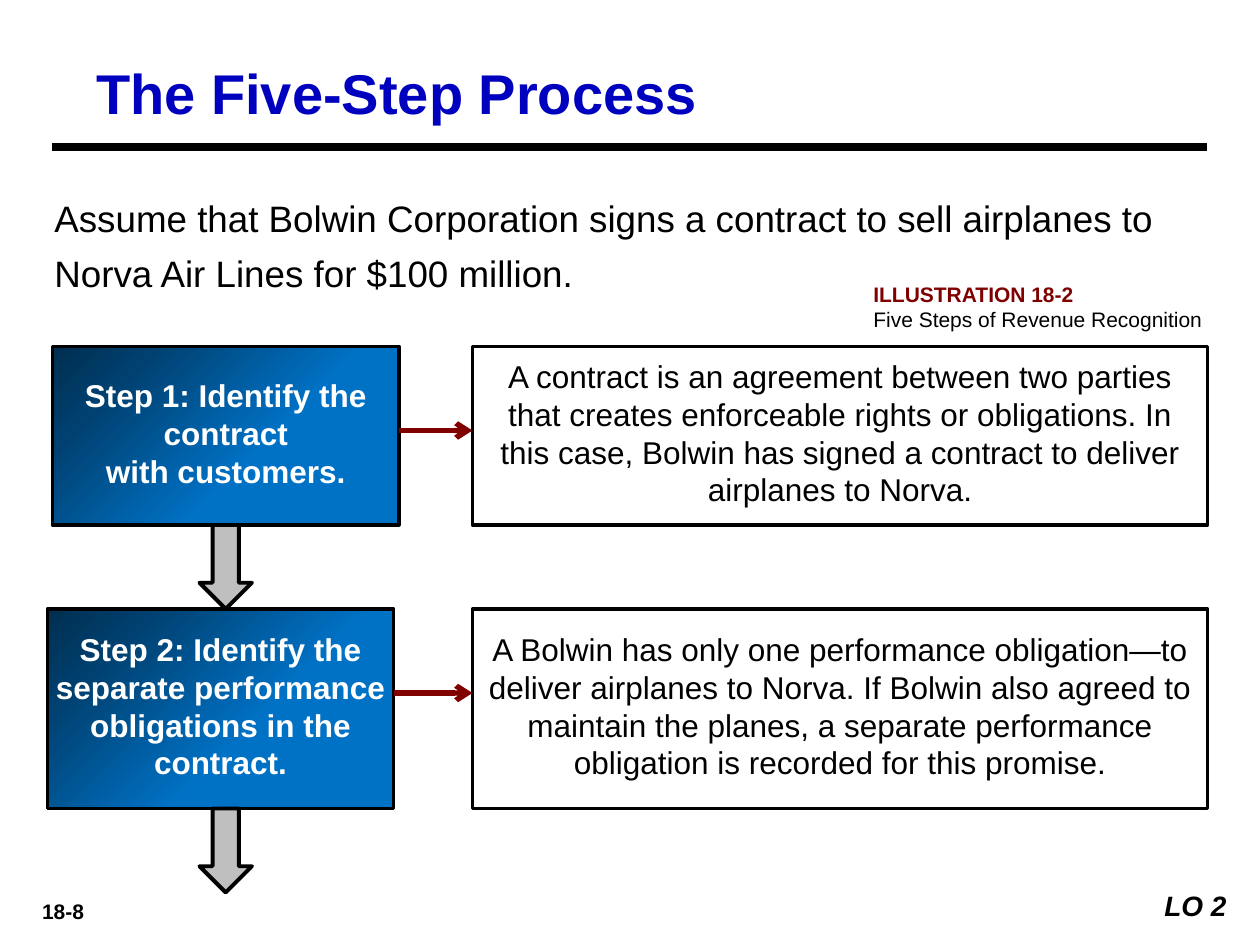
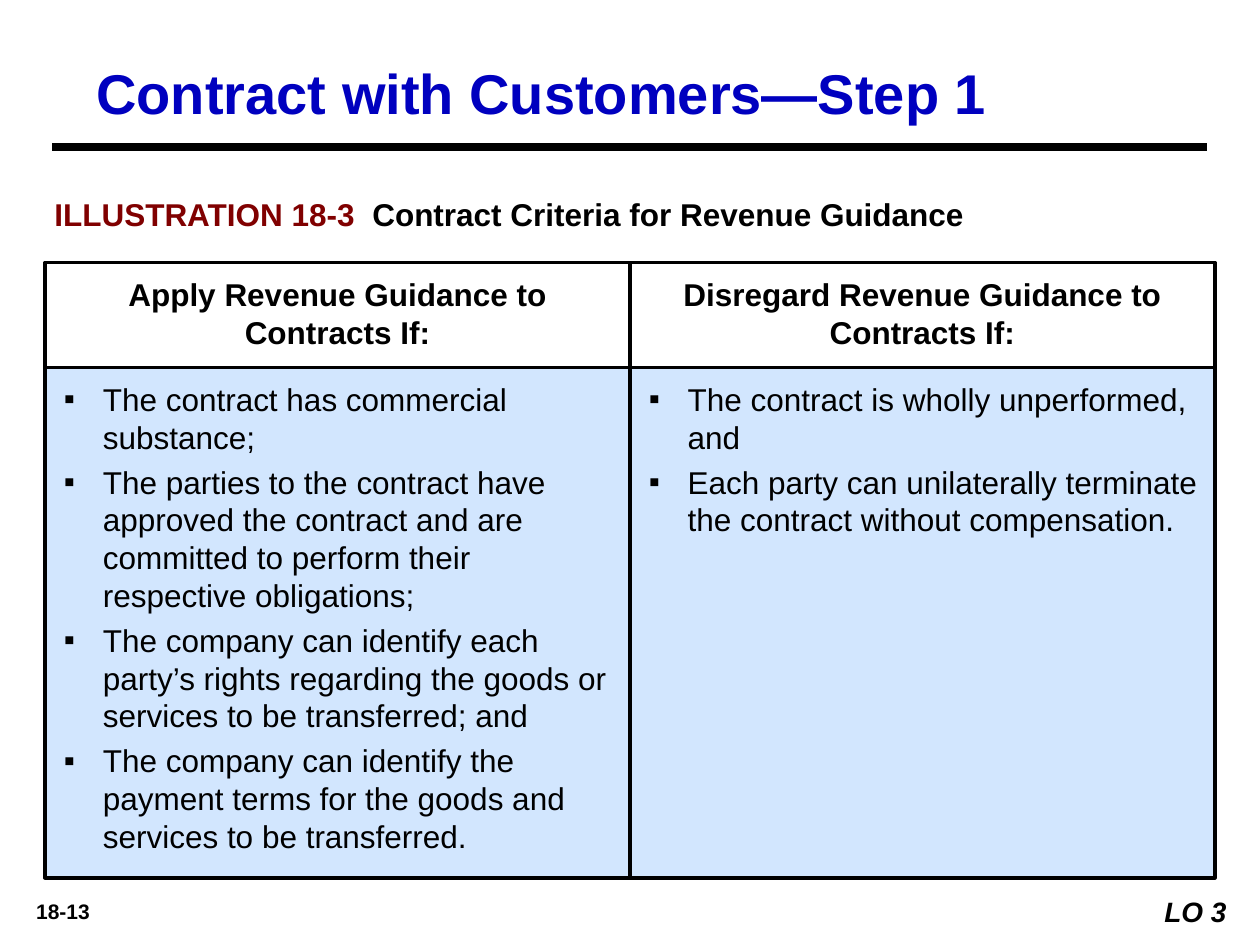
import pptx
import pptx.dml.color
import pptx.enum.shapes
import pptx.enum.text
import pptx.oxml
import pptx.oxml.ns
import pptx.util

RGBColor = pptx.dml.color.RGBColor
Shapes = pptx.enum.shapes.MSO_SHAPE
Align = pptx.enum.text.PP_ALIGN
Anchor = pptx.enum.text.MSO_ANCHOR

PX = 7620
FONT = "Arial"
BLACK = RGBColor(0x00, 0x00, 0x00)
WHITE = RGBColor(0xFF, 0xFF, 0xFF)
TITLE_BLUE = RGBColor(0x00, 0x00, 0xBF)
MAROON = RGBColor(0x80, 0x00, 0x00)
ARROW_GRAY = RGBColor(0xBF, 0xBF, 0xBF)
PALE_BLUE = RGBColor(0xD2, 0xE6, 0xFE)
STEP_GRADIENT = (
    (0, RGBColor(0x00, 0x2E, 0x4F)),
    (20, RGBColor(0x00, 0x41, 0x71)),
    (60, RGBColor(0x00, 0x72, 0xC6)),
)

FLOW_STEPS = (
    {
        "top": 330, "height": 170, "left": 50, "margin": 24, "detail_margin": 24,
        "step": ["Step 1: Identify the contract", "with customers."],
        "detail": [
            "A contract is an agreement between two parties",
            "that creates enforceable rights or obligations. In",
            "this case, Bolwin has signed a contract to deliver",
            "airplanes to Norva.",
        ],
    },
    {
        "top": 580, "height": 190, "left": 45, "margin": 6, "detail_margin": 12,
        "step": ["Step 2: Identify the separate performance obligations in the contract."],
        "detail": [
            "A Bolwin has only one performance obligation—to deliver airplanes to Norva. "
            "If Bolwin also agreed to maintain the planes, a separate performance "
            "obligation is recorded for this promise."
        ],
    },
)

CRITERIA = (
    (
        "Apply Revenue Guidance to Contracts If:",
        [
            "The contract has commercial substance;",
            "The parties to the contract have approved the contract and are committed "
            "to perform their respective obligations;",
            "The company can identify each party’s rights regarding the goods or "
            "services to be transferred; and",
            "The company can identify the payment terms for the goods and services "
            "to be transferred.",
        ],
    ),
    (
        "Disregard Revenue Guidance to Contracts If:",
        [
            "The contract is wholly unperformed, and",
            "Each party can unilaterally terminate the contract without compensation.",
        ],
    ),
)


def px(*lengths):
    """Turn px lengths into EMU."""
    return [pptx.util.Emu(length * PX) for length in lengths]


def make_element(tag, **attributes):
    """Make a drawing element such as a:effectLst with its attributes."""
    element = pptx.oxml.parse_xml(f"<{tag} {pptx.oxml.ns.nsdecls('a')}/>")
    for name, value in attributes.items():
        element.set(name, str(value))
    return element


def add_bullet(paragraph, indent):
    """Give a paragraph a square bullet with a hanging indent in px."""
    properties = paragraph._p.get_or_add_pPr()
    properties.set("marL", str(indent * PX))
    properties.set("indent", str(-indent * PX))
    properties.append(make_element("a:buFont", typeface=FONT))
    properties.append(make_element("a:buChar", char="▪"))


def write_text(shape, paragraphs, size=18, color=BLACK, bold=False, italic=False,
               align=Align.LEFT, anchor=Anchor.TOP, margins=(12, 6, 12, 6),
               line_spacing=None, space_before=None, bullet_indent=None):
    """Write paragraphs, each a string or a list of (text, color, bold) runs."""
    frame = shape.text_frame
    frame.word_wrap = True
    frame.vertical_anchor = anchor
    (frame.margin_left, frame.margin_top,
     frame.margin_right, frame.margin_bottom) = px(*margins)
    for index, content in enumerate(paragraphs):
        paragraph = frame.add_paragraph() if index else frame.paragraphs[0]
        paragraph.alignment = align
        if line_spacing:
            paragraph.line_spacing = line_spacing
        if space_before:
            paragraph.space_before = pptx.util.Pt(space_before)
        if bullet_indent:
            add_bullet(paragraph, bullet_indent)
        runs = [(content, color, bold)] if isinstance(content, str) else content
        for text, run_color, run_bold in runs:
            run = paragraph.add_run()
            run.text = text
            run.font.name = FONT
            run.font.size = pptx.util.Pt(size)
            run.font.bold = run_bold
            run.font.italic = italic
            run.font.color.rgb = run_color


def add_text(slide, box, paragraphs, **text_format):
    """Add a text box to the slide."""
    write_text(slide.shapes.add_textbox(*px(*box)), paragraphs, **text_format)


def add_box(slide, box, fill, line_width=None, kind=Shapes.RECTANGLE):
    """Add a filled shape, with a black outline if a width is given."""
    shape = slide.shapes.add_shape(kind, *px(*box))
    shape.shadow.inherit = False
    shape.fill.solid()
    shape.fill.fore_color.rgb = fill
    if line_width:
        shape.line.color.rgb = BLACK
        shape.line.width = pptx.util.Pt(line_width)
    else:
        shape.line.fill.background()
    return shape


def apply_gradient(shape, stops):
    """Replace the solid fill by a gradient spreading from the top left corner."""
    gradient = make_element("a:gradFill", rotWithShape=1)
    stop_list = make_element("a:gsLst")
    for position, color in stops:
        stop = make_element("a:gs", pos=position * 1000)
        stop.append(make_element("a:srgbClr", val=color))
        stop_list.append(stop)
    spread = make_element("a:path", path="circle")
    spread.append(make_element("a:fillToRect", r=100000, b=100000))
    gradient.extend([stop_list, spread])
    properties = shape.element.spPr
    solid = properties.find(pptx.oxml.ns.qn("a:solidFill"))
    properties.replace(solid, gradient)


def add_line(slide, start, end, color, width, arrow=False):
    """Add a straight line, with an arrowhead at its end if asked."""
    line = slide.shapes.add_connector(
        pptx.enum.shapes.MSO_CONNECTOR.STRAIGHT, *px(*start, *end))
    line.line.color.rgb = color
    line.line.width = pptx.util.Pt(width)
    properties = line.element.spPr
    if arrow:
        outline = properties.find(pptx.oxml.ns.qn("a:ln"))
        outline.append(make_element("a:tailEnd", type="arrow"))
    properties.append(make_element("a:effectLst"))


def add_base_slide(presentation, title, number, objective, objective_top):
    """Add a slide with the title, rule and footers that all slides share."""
    slide = presentation.slides.add_slide(presentation.slide_layouts[6])
    add_text(slide, (10, 850, 100, 36), [number], size=12, bold=True, align=Align.CENTER)
    add_line(slide, (50, 140), (1150, 140), BLACK, 4.5)
    write_text(add_box(slide, (1070, objective_top, 110, 44), WHITE), [objective],
               size=16, bold=True, italic=True, align=Align.RIGHT)
    add_text(slide, (80, 50, 1080, 73), [title], size=32, color=TITLE_BLUE, bold=True)
    return slide


def add_flow_row(slide, row):
    """Add a step, its detail box, the arrow between and the arrow below."""
    top, height, left = row["top"], row["height"], row["left"]
    step_width, detail_left = 330, 450
    detail = add_box(slide, (detail_left, top, 700, height), WHITE, 2)
    step = add_box(slide, (left, top, step_width, height), STEP_GRADIENT[-1][1], 2)
    apply_gradient(step, STEP_GRADIENT)
    for shape, part, margin, color in (
        (detail, "detail", row["detail_margin"], BLACK),
        (step, "step", row["margin"], WHITE),
    ):
        write_text(shape, row[part], color=color, bold=part == "step",
                   align=Align.CENTER, anchor=Anchor.MIDDLE,
                   margins=(margin, 0, margin, 6))
    add_line(slide, (left + step_width, top + 80), (detail_left, top + 80),
             MAROON, 3, arrow=True)
    add_box(slide, (190, top + height, 50, 80), ARROW_GRAY, 2.25, Shapes.DOWN_ARROW)


def add_criteria_column(slide, box, heading, criteria):
    """Add a heading cell above a cell of bulleted criteria."""
    left, top, width, height = box
    heading_height = 100
    header = add_box(slide, (left, top, width, heading_height), WHITE, 2.25)
    write_text(header, [heading], bold=True, align=Align.CENTER, margins=(12, 12, 12, 6))
    body = add_box(slide, (left, top + heading_height, width, height - heading_height),
                   PALE_BLUE, 2.25)
    write_text(body, criteria, margins=(18, 12, 12, 6), space_before=4, bullet_indent=37)


def build_process_slide(presentation):
    """Build the slide on the five-step process."""
    slide = add_base_slide(presentation, "The Five-Step Process", "18-8", "LO 2", 840)
    add_text(slide, (40, 170, 1110, 118),
             ["Assume that Bolwin Corporation signs a contract to sell airplanes to "
              "Norva Air Lines for $100 million."],
             size=21, line_spacing=1.25, space_before=12)
    add_text(slide, (820, 262, 350, 60),
             [[("ILLUSTRATION 18-2", MAROON, True)], "Five Steps of Revenue Recognition"],
             size=12)
    for row in FLOW_STEPS:
        add_flow_row(slide, row)


def build_criteria_slide(presentation):
    """Build the slide on the contract criteria."""
    slide = add_base_slide(presentation, "Contract with Customers—Step 1",
                           "18-13", "LO 3", 846)
    add_text(slide, (40, 180, 990, 48),
             [[("ILLUSTRATION 18-3  ", MAROON, True),
               ("Contract Criteria for Revenue Guidance", BLACK, True)]])
    width = 557
    for index, (heading, criteria) in enumerate(CRITERIA):
        add_criteria_column(slide, (43 + index * width, 250, width, 586), heading, criteria)


def main():
    """Build both slides and save them."""
    presentation = pptx.Presentation()
    presentation.slide_width, presentation.slide_height = px(1200, 900)
    build_process_slide(presentation)
    build_criteria_slide(presentation)
    presentation.save("out.pptx")


if __name__ == "__main__":
    main()
